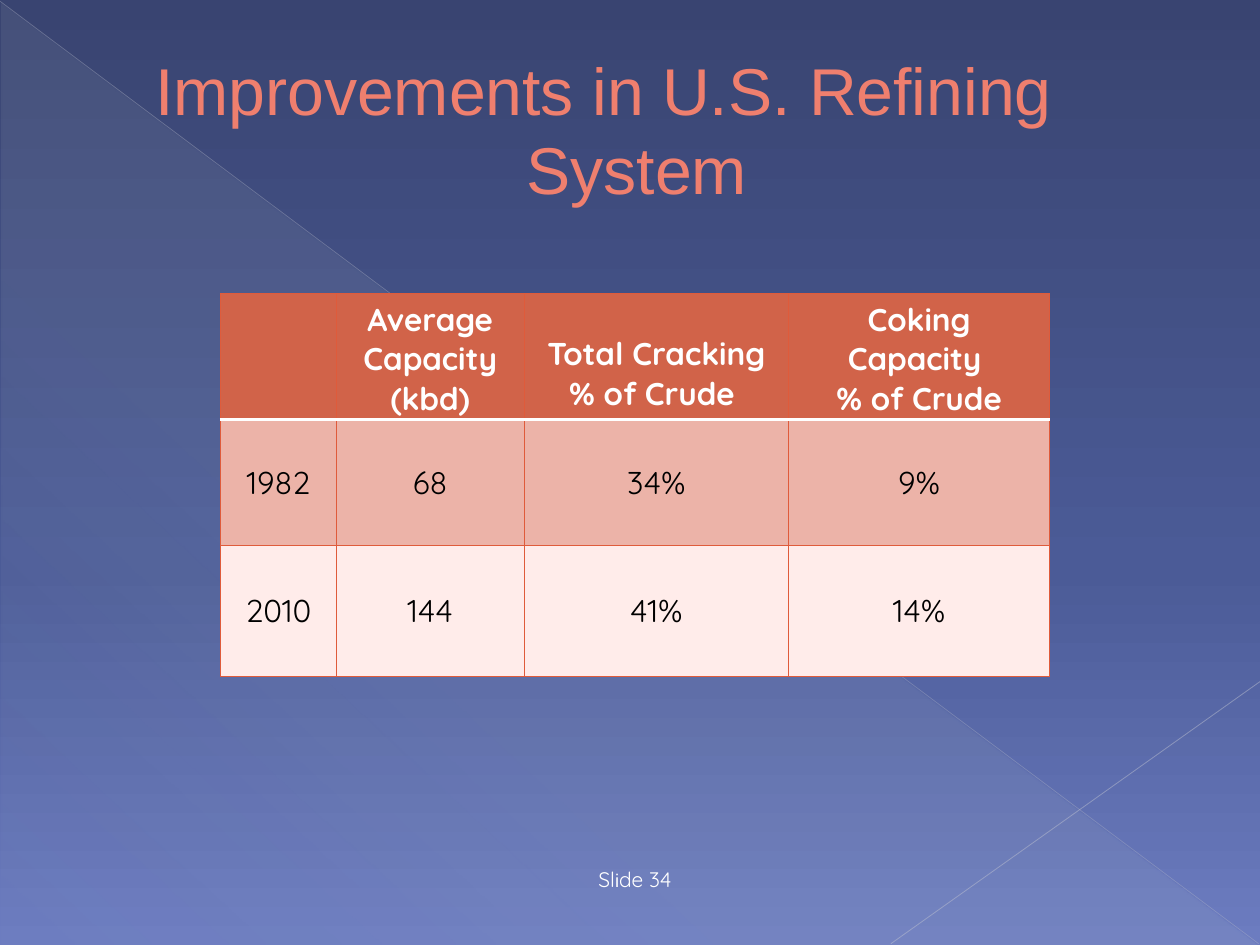
from typing import NamedTuple

from lxml.etree import SubElement
from pptx import Presentation
from pptx.dml.color import RGBColor
from pptx.enum.shapes import MSO_CONNECTOR, MSO_SHAPE
from pptx.enum.text import MSO_ANCHOR, PP_ALIGN
from pptx.oxml.ns import qn
from pptx.util import Inches, Pt

WIDE, HIGH = Inches(10), Inches(7.5)
CORAL, RUST = "DF5B3B", "D16349"
WHITE, BLACK = "FFFFFF", "000000"
BODY = "Quicksand"


class Stop(NamedTuple):
    pos: int
    color: str
    alpha: int = 100


class Box(NamedTuple):
    """Left, top, width and height in percent of the slide."""
    x: float
    y: float
    w: float
    h: float


class Run(NamedTuple):
    text: str
    size: float
    name: str
    color: str


class Ray(NamedTuple):
    """Start and end in percent of the slide."""
    x1: float
    y1: float
    x2: float
    y2: float
    color: str
    width: float
    alpha: int


class Band(NamedTuple):
    """One table row; a line break in a cell starts a paragraph."""
    height: float
    fill: str
    ink: str
    bold: bool
    anchor: MSO_ANCHOR
    base: tuple
    cells: tuple


def across(share: float) -> int:
    return round(WIDE * share / 100)


def down(share: float) -> int:
    return round(HIGH * share / 100)


def place(box: Box) -> tuple:
    return across(box.x), down(box.y), across(box.w), down(box.h)


def rgb(color: str) -> RGBColor:
    return RGBColor.from_string(color)


def tint(parent, color: str, alpha: int = 100) -> None:
    node = SubElement(parent, qn("a:srgbClr"), val=color)
    if alpha < 100:
        SubElement(node, qn("a:alpha"), val=str(alpha * 1000))


def blend(fill, stops: tuple, angle: int) -> None:
    """Give a fill a linear gradient."""
    fill.gradient()
    grad = fill._xPr.find(qn("a:gradFill"))
    for child in list(grad):
        grad.remove(child)
    group = SubElement(grad, qn("a:gsLst"))
    for stop in stops:
        node = SubElement(group, qn("a:gs"), pos=str(stop.pos * 1000))
        tint(node, stop.color, stop.alpha)
    SubElement(grad, qn("a:lin"), ang=str(angle * 60000), scaled="0")


def style(font, **values) -> None:
    font.color.rgb = rgb(values.pop("color"))
    for key, value in values.items():
        setattr(font, key, value)


def draw_ray(slide, ray: Ray) -> None:
    line = slide.shapes.add_connector(
        MSO_CONNECTOR.STRAIGHT, across(ray.x1), down(ray.y1),
        across(ray.x2), down(ray.y2))
    line.line.width = Pt(ray.width)
    line.line.color.rgb = rgb(ray.color)
    props = line._element.spPr
    node = props.find(".//" + qn("a:srgbClr"))
    SubElement(node, qn("a:alpha"), val=str(ray.alpha * 1000))
    SubElement(props, qn("a:effectLst"))


def draw_text(slide, box: Box, runs: tuple, anchor: MSO_ANCHOR,
              hang: float = 0) -> None:
    frame = slide.shapes.add_textbox(*place(box)).text_frame
    frame.word_wrap = True
    frame.vertical_anchor = anchor
    para = frame.paragraphs[0]
    para.alignment = PP_ALIGN.CENTER
    if hang:
        props = para._p.get_or_add_pPr()
        props.set("marL", str(Inches(hang)))
        props.set("indent", str(-Inches(hang)))
    for item in runs:
        run = para.add_run()
        run.text = item.text
        style(run.font, size=Pt(item.size), name=item.name, color=item.color)


def draw_edge(cell, side: str, color: str, width: float) -> None:
    props = cell._tc.get_or_add_tcPr()
    edge = SubElement(props, qn("a:ln" + side), w=str(Pt(width)))
    tint(SubElement(edge, qn("a:solidFill")), color)


def draw_cell(cell, text: str, band: Band, top: tuple) -> None:
    thin = (CORAL, 0.75)
    for side, edge in dict(L=thin, R=thin, T=top, B=band.base).items():
        draw_edge(cell, side, *edge)
    cell.fill.solid()
    cell.fill.fore_color.rgb = rgb(band.fill)
    cell.vertical_anchor = band.anchor
    cell.text_frame.text = text
    for para in cell.text_frame.paragraphs:
        para.alignment = PP_ALIGN.CENTER
        font = para.runs[0].font if para.runs else para.font
        style(font, size=Pt(18), name=BODY, color=band.ink, bold=band.bold)


def draw_table(slide, box: Box, cols: tuple, bands: tuple) -> None:
    table = slide.shapes.add_table(len(bands), len(cols), *place(box)).table
    for col, width in zip(table.columns, cols):
        col.width = across(width)
    top = (CORAL, 0.75)
    for row, band in zip(table.rows, bands):
        row.height = down(band.height)
        for cell, text in zip(row.cells, band.cells):
            draw_cell(cell, text, band, top)
        top = band.base


SKY = (Stop(0, "394471"), Stop(60, "4B5B97"), Stop(100, "6C7CC0"))
HAZE = (Stop(0, "C5D1D7", 10), Stop(70, "C5D1D7", 8), Stop(100, "C5D1D7", 1))
RAYS = (Ray(0, 0.13, 99.9, 99.87, "BABECD", 0.39, 35),
        Ray(100, 72.13, 70.7, 99.87, "C2C5D2", 0.47, 45))
TITLE = (Run("Improvements in U.S. Refining System", 37.8, "Arial", "EF7F6E"),)
FOOT = (Run("Sl", 12, BODY, WHITE), Run("i", 10.5, "Arial", WHITE),
        Run("de 34", 12, BODY, WHITE))
THIN, THICK = (CORAL, 0.75), (WHITE, 2)
BANDS = (
    Band(13.33, RUST, WHITE, True, MSO_ANCHOR.BOTTOM, THICK,
         ("", "Average Capacity (kbd)", "Total Cracking\n% of Crude ",
          "Coking Capacity \n% of Crude")),
    Band(13.33, "ECB3A8", BLACK, False, MSO_ANCHOR.MIDDLE, THIN,
         ("1982", "68", "34%", "9%")),
    Band(13.87, "FFECEA", BLACK, False, MSO_ANCHOR.MIDDLE, THIN,
         ("2010", "144", "41%", "14%")),
)


def main() -> None:
    deck = Presentation()
    deck.slide_width, deck.slide_height = WIDE, HIGH
    slide = deck.slides.add_slide(deck.slide_layouts[6])

    # Backdrop
    blend(slide.background.fill, SKY, 90)
    wedge = slide.shapes.add_shape(
        MSO_SHAPE.RIGHT_TRIANGLE, *place(Box(0.1, 0.27, 99.8, 99.73)))
    wedge.shadow.inherit = False
    wedge.line.fill.background()
    blend(wedge.fill, HAZE, 133)
    for ray in RAYS:
        draw_ray(slide, ray)

    # Title, slide number and table
    draw_text(slide, Box(7.5, 6.67, 80.8, 13.87), TITLE,
              MSO_ANCHOR.MIDDLE, hang=0.53)
    draw_text(slide, Box(40, 90.67, 20.8, 4.4), FOOT, MSO_ANCHOR.BOTTOM)
    draw_table(slide, Box(17.5, 31.07, 65.8, 40.53),
               (9.2, 14.9, 21, 20.7), BANDS)
    deck.save("out.pptx")


if __name__ == "__main__":
    main()
